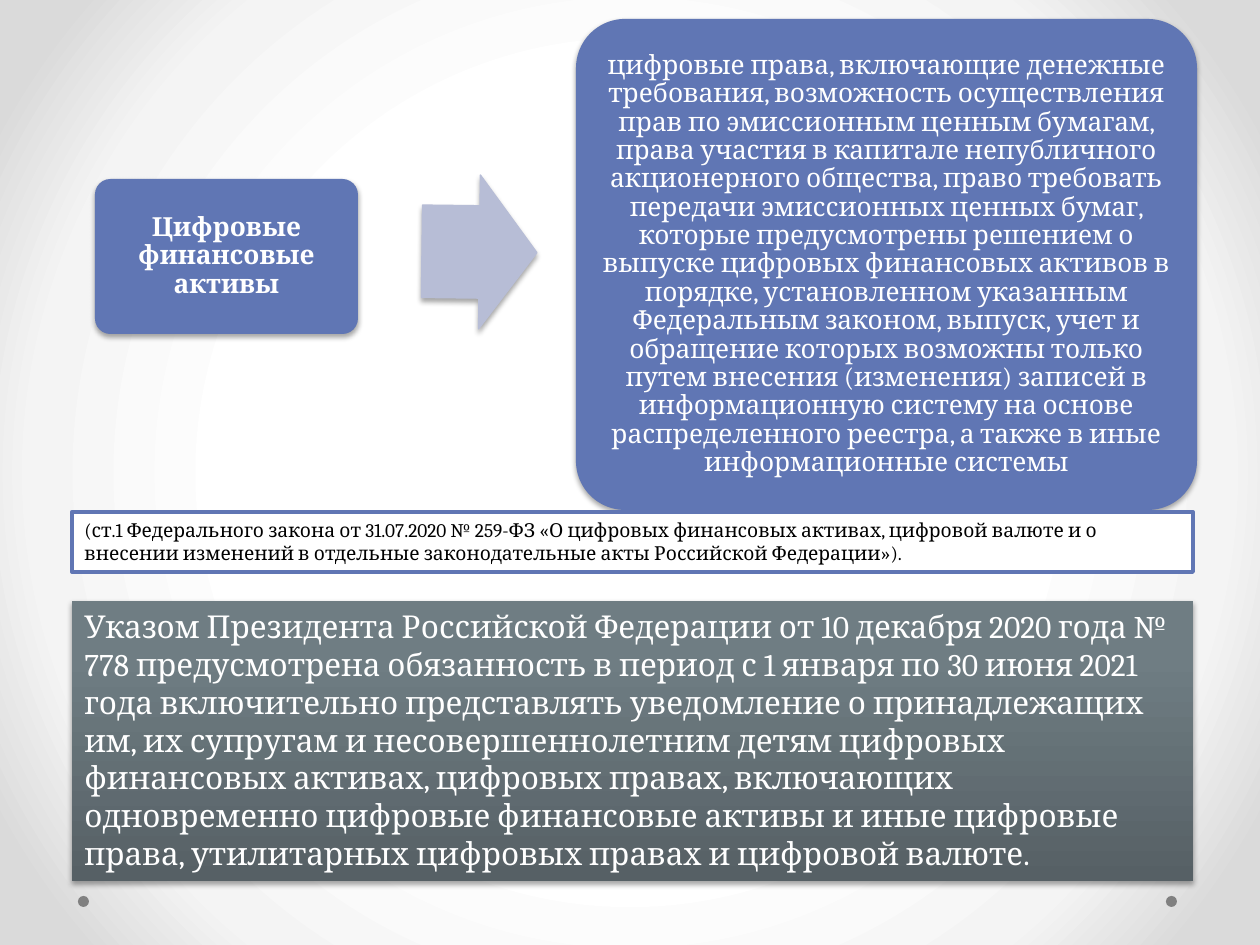
from lxml.etree import SubElement
from pptx import Presentation
from pptx.dml.color import RGBColor
from pptx.enum.shapes import MSO_SHAPE as SHAPE
from pptx.enum.text import MSO_ANCHOR as ANCHOR, PP_ALIGN as ALIGN
from pptx.oxml.ns import qn
from pptx.util import Emu, Pt

PX = 914400 / 126  # EMU in one px
FONT = "Cambria"

BLUE = RGBColor(0x60, 0x76, 0xB4)
PALE_BLUE = RGBColor(0xB7, 0xBD, 0xD6)
GREY = RGBColor(0x80, 0x80, 0x80)
WHITE = RGBColor(0xFF, 0xFF, 0xFF)
BLACK = RGBColor(0x00, 0x00, 0x00)
BACKDROP = [(50, WHITE), (76, RGBColor(0xF4, 0xF4, 0xF4)), (92, RGBColor(0xDA, 0xDA, 0xDA))]
SLATE = [(0, RGBColor(0x56, 0x60, 0x65)), (80, RGBColor(0x6F, 0x7D, 0x83)),
         (100, RGBColor(0x6F, 0x7E, 0x84))]

TERM = "Цифровые финансовые активы"
DEFINITION = (
    "цифровые права, включающие денежные требования, возможность осуществления прав "
    "по эмиссионным ценным бумагам, права участия в капитале непубличного акционерного "
    "общества, право требовать передачи эмиссионных ценных бумаг, которые предусмотрены "
    "решением о выпуске цифровых финансовых активов в порядке, установленном указанным "
    "Федеральным законом, выпуск, учет и обращение которых возможны только путем внесения "
    "(изменения) записей в информационную систему на основе распределенного реестра, "
    "а также в иные информационные системы")
LAW = (
    "(ст.1 Федерального закона от 31.07.2020 № 259-ФЗ «О цифровых финансовых активах, "
    "цифровой валюте и о внесении изменений в отдельные законодательные акты "
    "Российской Федерации»).")
DECREE = (
    "Указом Президента Российской Федерации от 10 декабря 2020 года № 778 предусмотрена "
    "обязанность в период с 1 января по 30 июня 2021 года включительно представлять "
    "уведомление о принадлежащих им, их супругам и несовершеннолетним детям цифровых "
    "финансовых активах, цифровых правах, включающих одновременно цифровые финансовые "
    "активы и иные цифровые права, утилитарных цифровых правах и цифровой валюте.")


def px(n):
    return Emu(round(n * PX))


def set_gradient(fill, host, stops, angle=None):
    """Linear gradient at the given angle, or a circular one without it."""
    fill.gradient()
    grad = host.find(".//" + qn("a:gradFill"))
    grad.clear()
    stop_list = SubElement(grad, qn("a:gsLst"))
    for pos, color in stops:
        stop = SubElement(stop_list, qn("a:gs"), pos=str(pos * 1000))
        SubElement(stop, qn("a:srgbClr"), val=str(color))
    if angle is None:
        circle = SubElement(grad, qn("a:path"))
        circle.set("path", "circle")
        SubElement(circle, qn("a:fillToRect"), l="50000", t="50000", r="50000", b="50000")
    else:
        SubElement(grad, qn("a:lin"), ang=str(angle * 60000), scaled="0")


def add_shadow(sp):
    effects = sp.element.spPr.find(qn("a:effectLst"))
    shadow = SubElement(effects, qn("a:outerShdw"), blurRad=str(Pt(3.1)), dist=str(Pt(1.8)),
                        dir="5400000", algn="ctr", rotWithShape="0")
    color = SubElement(shadow, qn("a:srgbClr"), val="000000")
    SubElement(color, qn("a:alpha"), val="35000")


def add_box(slide, kind, x, y, w, h, fill=None, line=None, line_width=0.75):
    sp = slide.shapes.add_shape(kind, px(x), px(y), px(w), px(h))
    sp.shadow.inherit = False
    if fill is not None:
        sp.fill.solid()
        sp.fill.fore_color.rgb = fill
    if line is None:
        sp.line.fill.background()
    else:
        sp.line.color.rgb = line
        sp.line.width = Pt(line_width)
    return sp


def set_text(sp, text, size, color, align=ALIGN.LEFT, anchor=ANCHOR.TOP, bold=False):
    tf = sp.text_frame
    tf.word_wrap = True
    tf.vertical_anchor = anchor
    tf.text = text
    p = tf.paragraphs[0]
    p.alignment = align
    font = p.runs[0].font
    font.name, font.size, font.bold = FONT, Pt(size), bold
    font.color.rgb = color


def add_card(slide, x, y, w, h, text, bold=False):
    sp = add_box(slide, SHAPE.ROUNDED_RECTANGLE, x, y, w, h, BLUE)
    sp.adjustments[0] = 0.1
    add_shadow(sp)
    set_text(sp, text, 15, WHITE, ALIGN.CENTER, ANCHOR.MIDDLE, bold)
    tf = sp.text_frame
    tf.margin_left = tf.margin_right = tf.margin_top = tf.margin_bottom = px(8)
    tf.paragraphs[0].line_spacing = 0.9


def add_definition(slide, x, y, w, h):
    """Term on the left, arrow, definition on the right."""
    add_card(slide, x, y + 160, 263, 155, TERM, bold=True)
    arrow = add_box(slide, SHAPE.RIGHT_ARROW, x + 327, y + 156, 115, 154, PALE_BLUE, PALE_BLUE)
    arrow.adjustments[0], arrow.adjustments[1] = 0.6, 0.5
    arrow.rotation = 0.7
    add_shadow(arrow)
    add_card(slide, x + 481, y, w - 481, h, DEFINITION)


def add_sources(slide, x, y, w, h):
    """Law reference above the decree panel."""
    law = add_box(slide, SHAPE.RECTANGLE, x, y, w, 60, WHITE, BLUE, 2.25)
    set_text(law, LAW, 11, BLACK)
    decree = add_box(slide, SHAPE.RECTANGLE, x, y + 89, w, h - 89)
    set_gradient(decree.fill, decree.element, SLATE, 270)
    add_shadow(decree)
    set_text(decree, DECREE, 18, WHITE)


def add_footer_dots(slide, x, y, w, size):
    for left in (x, x + w - size):
        add_box(slide, SHAPE.OVAL, left, y, size, size, GREY)


def main():
    prs = Presentation()
    prs.slide_width, prs.slide_height = px(1260), px(945)
    slide = prs.slides.add_slide(prs.slide_layouts[6])
    set_gradient(slide.background.fill, slide.element, BACKDROP)
    add_footer_dots(slide, 78, 896, 1099, 11)
    add_definition(slide, 95, 19, 1102, 491)
    add_sources(slide, 72, 512, 1121, 369)
    prs.save("out.pptx")


if __name__ == "__main__":
    main()
